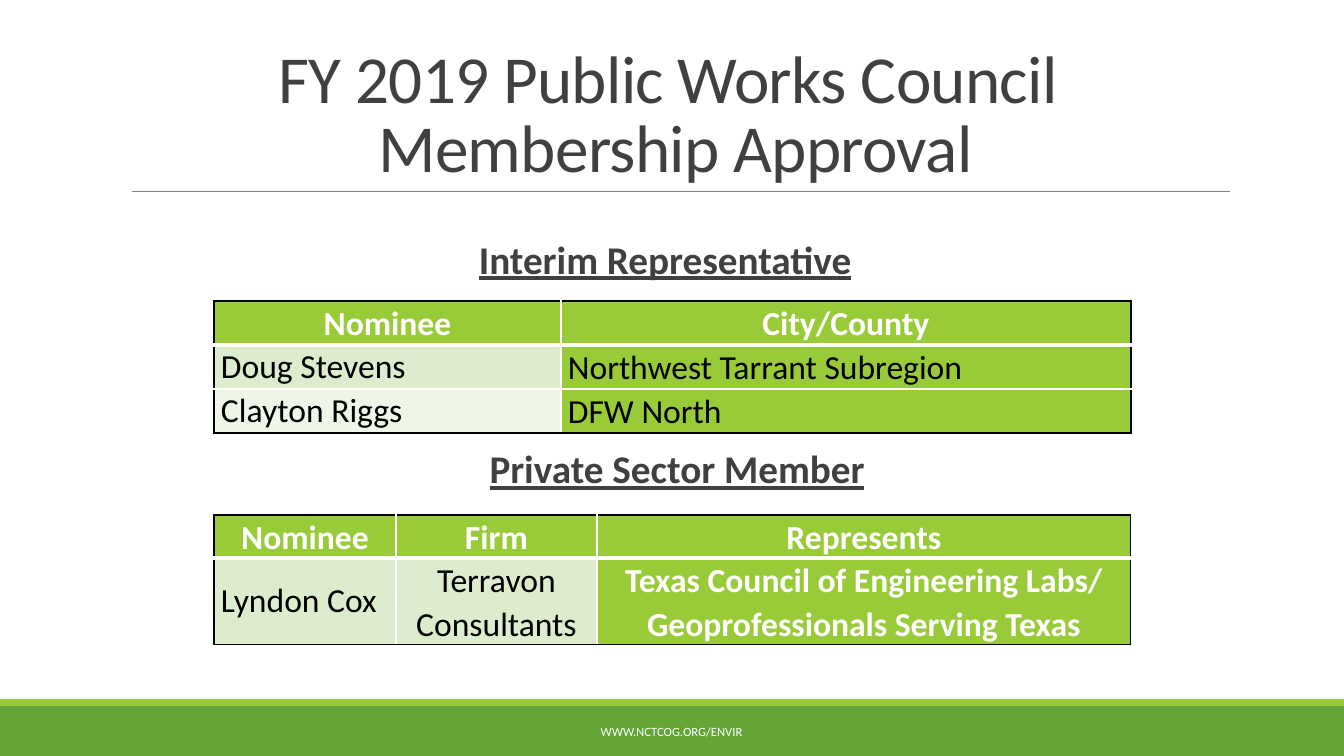
from lxml import etree
from pptx import Presentation
from pptx.dml.color import RGBColor
from pptx.enum.shapes import MSO_CONNECTOR, MSO_SHAPE
from pptx.enum.text import MSO_ANCHOR, PP_ALIGN
from pptx.oxml.ns import qn
from pptx.util import Pt

PX = 914400 / 100.8
LEFT, CENTER = PP_ALIGN.LEFT, PP_ALIGN.CENTER
TOP, MIDDLE, BOTTOM = MSO_ANCHOR.TOP, MSO_ANCHOR.MIDDLE, MSO_ANCHOR.BOTTOM
LIME, GREEN, PALE, FAINT = "99CB38", "63A537", "DEECCE", "EFF6E8"
BLACK, WHITE, DARK, GRAY = "000000", "FFFFFF", "404040", "808080"


def px(*vals):
    return [round(v * PX) for v in vals]


def write(para, text, size, color, bold=False, align=CENTER, space=None):
    """Add one styled run to a paragraph and return its font."""
    para.alignment = align
    if space:
        para.line_spacing = space
    run = para.add_run()
    run.text = text
    font = run.font
    font.name, font.size, font.bold = "Calibri", Pt(size), bold
    font.color.rgb = RGBColor.from_string(color)
    return font


prs = Presentation()
prs.slide_width, prs.slide_height = px(1344, 756)
slide = prs.slides.add_slide(prs.slide_layouts[6])
shapes = slide.shapes

# Footer bands and title rule
for top, high, color in [(706, 50, GREEN), (699, 7, LIME)]:
    band = shapes.add_shape(MSO_SHAPE.RECTANGLE, *px(0, top, 1344, high))
    band.shadow.inherit = False
    band.fill.solid()
    band.fill.fore_color.rgb = RGBColor.from_string(color)
    band.line.fill.background()

rule = shapes.add_connector(MSO_CONNECTOR.STRAIGHT, *px(132, 191, 1230, 191))
rule.line.color.rgb = RGBColor.from_string(GRAY)
rule.line.width = Pt(0.5)
etree.SubElement(rule._element.spPr, qn("a:effectLst"))

# Title
frame = shapes.add_textbox(*px(121, 31, 1109, 160)).text_frame
frame.word_wrap = True
frame.vertical_anchor = BOTTOM
title = frame.paragraphs[0]
for i, text in enumerate(["FY 2019 Public Works Council ", "Membership Approval"]):
    if i:
        title.add_line_break()
    font = write(title, text, 48, DARK, space=0.85)
    font._element.set("spc", "-50")

# Headings and footer: box, wrap, anchor, text, size, color, heading, align
labels = [
    ((406, 712, 531, 40), True, MIDDLE, "WWW.NCTCOG.ORG/ENVIR", 9, WHITE, False, CENTER),
    ((469, 230, 413, 57), False, TOP, "Interim Representative", 28, DARK, True, LEFT),
    ((362, 445, 620, 57), True, TOP, "Private Sector Member", 28, DARK, True, CENTER),
]
for box, wrap, anchor, text, size, color, head, align in labels:
    frame = shapes.add_textbox(*px(*box)).text_frame
    frame.word_wrap = wrap
    frame.vertical_anchor = anchor
    font = write(frame.paragraphs[0], text, size, color, head, align)
    font.underline = head

# The last label hangs from a small left indent
frame.margin_left = frame.margin_right = 0
para = frame.paragraphs[0]
para.line_spacing = 0.9
para.space_before, para.space_after = Pt(12), Pt(2)
para._p.get_or_add_pPr().set("marL", str(px(10)[0]))

# Tables: top, column widths, row heights, cells of (text, fill, color, bold, align)
members = [
    [("Nominee", LIME, WHITE, True, CENTER), ("City/County", LIME, WHITE, True, CENTER)],
    [("Doug Stevens", PALE, BLACK, False, LEFT),
     ("Northwest Tarrant Subregion", LIME, BLACK, False, LEFT)],
    [("Clayton Riggs", FAINT, BLACK, False, LEFT), ("DFW North", LIME, BLACK, False, LEFT)],
]
private = [
    [(name, LIME, WHITE, True, CENTER) for name in ("Nominee", "Firm", "Represents")],
    [("Lyndon Cox", PALE, BLACK, False, LEFT),
     ("Terravon Consultants", PALE, BLACK, False, CENTER),
     ("Texas Council of Engineering Labs/ Geoprofessionals Serving Texas",
      LIME, WHITE, True, CENTER)],
]
tables = [
    (301, (347, 570), (44, 44, 44), members),
    (515, (182, 201, 534), (43, 86), private),
]
for top, wides, highs, rows in tables:
    frame = shapes.add_table(len(highs), len(wides),
                             *px(214, top, sum(wides), sum(highs)))
    table = frame.table
    table.first_row = table.horz_banding = False
    for col, wide in zip(table.columns, px(*wides)):
        col.width = wide
    for row, high in zip(table.rows, px(*highs)):
        row.height = high
    for r, row in enumerate(rows):
        for c, (text, fill, color, bold, align) in enumerate(row):
            cell = table.cell(r, c)
            cell.vertical_anchor = MIDDLE
            cell.margin_left, cell.margin_right = px(7, 7)
            cell.margin_top = cell.margin_bottom = 0
            plain = align == LEFT and c == 0
            write(cell.text_frame.paragraphs[0], text, 24, color, bold, align,
                  None if plain else 1.07)
            # Black on the outer edge, white inside, thick under the header
            edges = [("L", c == 0), ("R", c == len(wides) - 1),
                     ("T", r == 0), ("B", r == len(highs) - 1)]
            props = cell._tc.get_or_add_tcPr()
            for side, outer in edges:
                width = Pt(3 if side == "B" and r == 0 else 1)
                line = etree.SubElement(props, qn("a:ln" + side), w=str(width))
                solid = etree.SubElement(line, qn("a:solidFill"))
                etree.SubElement(solid, qn("a:srgbClr"), val=BLACK if outer else WHITE)
            cell.fill.solid()
            cell.fill.fore_color.rgb = RGBColor.from_string(fill)

prs.save("out.pptx")
